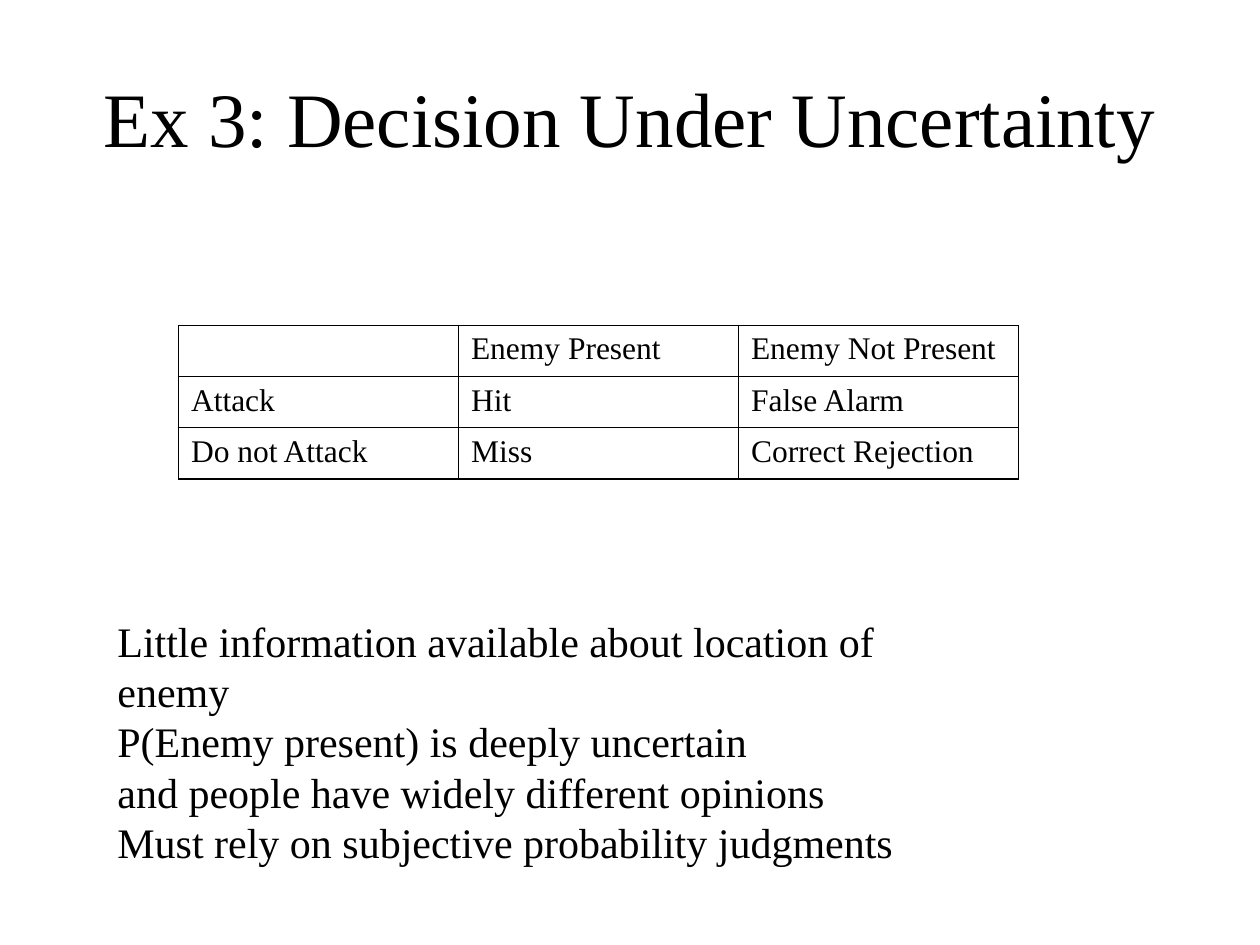
import pptx
import pptx.util
import pptx.dml.color
import pptx.enum.text
import pptx.oxml
import pptx.oxml.ns

Pt = pptx.util.Pt
RGB = pptx.dml.color.RGBColor

TITLE = "Ex 3: Decision Under Uncertainty"
ROWS = [
    ("", "Enemy Present", "Enemy Not Present"),
    ("Attack", "Hit", "False Alarm"),
    ("Do not Attack", "Miss", "Correct Rejection"),
]
NOTES = [
    "Little information available about location of enemy",
    "P(Enemy present) is deeply uncertain",
    "and people have widely different opinions",
    "Must rely on subjective probability judgments",
]
THEME = {"face": "Times New Roman", "ink": "000000", "title": 44,
         "cell": 18, "note": 24, "lead": 28.8, "rule": 1}


def style(para, size):
    para.font.name = THEME["face"]
    para.font.size = Pt(size)
    para.font.color.rgb = RGB.from_string(THEME["ink"])


def place(shape, left, top, width, height):
    shape.left, shape.top = Pt(left), Pt(top)
    shape.width, shape.height = Pt(width), Pt(height)


def border(cell):
    props = cell._tc.get_or_add_tcPr()
    for index, side in enumerate(("lnL", "lnR", "lnT", "lnB")):
        props.insert(index, pptx.oxml.parse_xml(
            f'<a:{side} {pptx.oxml.ns.nsdecls("a")} w="{Pt(THEME["rule"])}">'
            f'<a:solidFill><a:srgbClr val="{THEME["ink"]}"/></a:solidFill>'
            f'</a:{side}>'))


def add_title(slide):
    title = slide.shapes.title
    place(title, 36, 21.6, 648, 90)
    frame = title.text_frame
    frame.text = TITLE
    frame.word_wrap = True
    frame.vertical_anchor = pptx.enum.text.MSO_ANCHOR.MIDDLE
    para = frame.paragraphs[0]
    para.alignment = pptx.enum.text.PP_ALIGN.CENTER
    style(para, THEME["title"])


def add_grid(slide, left, top, wide, high):
    rows, cols = len(ROWS), len(ROWS[0])
    table = slide.shapes.add_table(
        rows, cols, Pt(left), Pt(top), Pt(wide * cols), Pt(high * rows)).table
    table.first_row = table.horz_banding = False
    for r, row in enumerate(ROWS):
        for c, text in enumerate(row):
            cell = table.cell(r, c)
            cell.text = text
            cell.fill.background()
            style(cell.text_frame.paragraphs[0], THEME["cell"])
            border(cell)


def add_notes(slide):
    box = slide.shapes.add_textbox(Pt(60), Pt(348), Pt(505.4), Pt(124))
    frame = box.text_frame
    frame.word_wrap = True
    frame.text = "\n".join(NOTES)
    for para in frame.paragraphs:
        style(para, THEME["note"])
        para.line_spacing = Pt(THEME["lead"])


def main():
    deck = pptx.Presentation()
    deck.slide_width, deck.slide_height = Pt(720), Pt(540)
    slide = deck.slides.add_slide(deck.slide_layouts[5])
    add_title(slide)
    add_grid(slide, 102, 186, 160, 29.2)
    add_notes(slide)
    deck.save("out.pptx")


if __name__ == "__main__":
    main()
